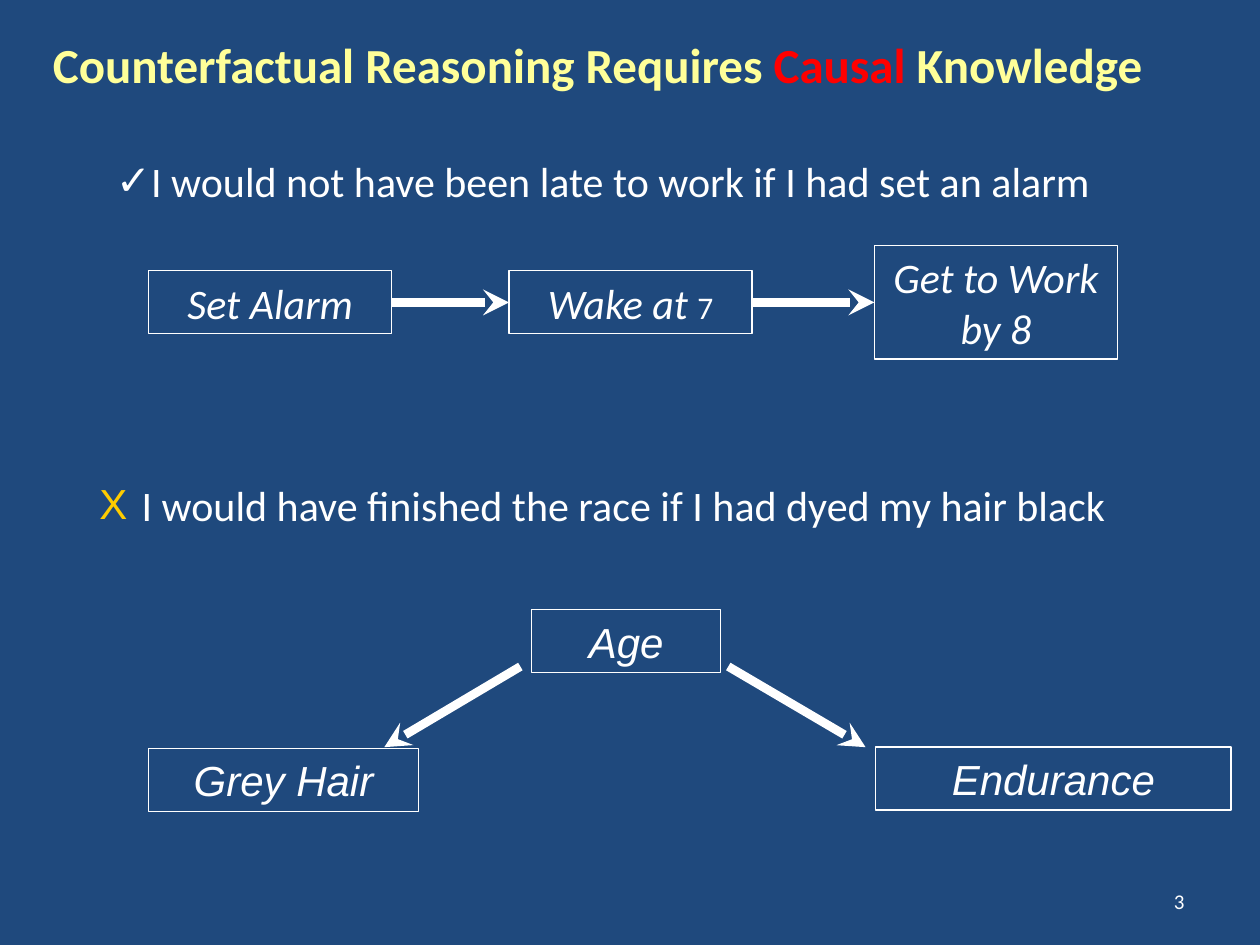
from lxml.etree import SubElement
from pptx import Presentation
from pptx.dml.color import RGBColor
from pptx.enum.shapes import MSO_CONNECTOR as Connector, MSO_SHAPE as Preset
from pptx.enum.text import MSO_ANCHOR as Anchor, MSO_AUTO_SIZE as AutoSize, PP_ALIGN as Align
from pptx.oxml.ns import qn
from pptx.util import Inches, Pt

WIDTH, HEIGHT = Inches(10), Inches(7.5)
COLUMNS, ROWS = 100, 75
WHITE, YELLOW, RED, GOLD, NAVY = "FFFFFF", "FFFF99", "FF0000", "FFCC00", "1F497D"
LEFT, RIGHT = 1, 3


def column(number):
    return round(WIDTH * number / COLUMNS)


def row(number):
    return round(HEIGHT * number / ROWS)


def area(left, top, width, height):
    return column(left), row(top), column(width), row(height)


def color(value):
    return RGBColor.from_string(value)


def add_text(paragraph, text, size=24, font="Calibri", fill=WHITE, bold=False, italic=False):
    run = paragraph.add_run()
    run.text = text
    run.font.size = Pt(size)
    run.font.name = font
    run.font.bold = bold
    run.font.italic = italic
    run.font.color.rgb = color(fill)


def format_paragraph(paragraph, margin, indent=0, bullet=None, bullet_color=WHITE, before=0):
    properties = paragraph._p.get_or_add_pPr()
    properties.set("marL", str(Inches(margin)))
    properties.set("indent", str(Inches(indent)))
    if bullet:
        bullet_fill = SubElement(properties, qn("a:buClr"))
        SubElement(bullet_fill, qn("a:srgbClr"), val=bullet_color)
        SubElement(properties, qn("a:buFont"), typeface="Arial")
        SubElement(properties, qn("a:buChar"), char=bullet)
    else:
        SubElement(properties, qn("a:buNone"))
    paragraph.space_before = Pt(before)
    paragraph.space_after = Pt(18)


def add_text_box(slide, place):
    frame = slide.shapes.add_textbox(*place).text_frame
    frame.word_wrap = True
    return frame


def add_node(group, place, runs, font="Calibri"):
    node = group.shapes.add_shape(Preset.RECTANGLE, *place)
    node.shadow.inherit = False
    node.fill.background()
    node.line.color.rgb = color(WHITE)
    node.line.width = Pt(0.75)
    node.text_frame.word_wrap = True
    paragraph = node.text_frame.paragraphs[0]
    paragraph.alignment = Align.CENTER
    for text, style in runs:
        add_text(paragraph, text, font=font, **style)
    return node


def add_arrow(group, start=(0, 0), end=(0, 0)):
    arrow = group.shapes.add_connector(
        Connector.STRAIGHT, column(start[0]), row(start[1]), column(end[0]), row(end[1]))
    arrow.line.color.rgb = color(WHITE)
    arrow.line.width = Pt(5)
    SubElement(arrow.line._get_or_add_ln(), qn("a:tailEnd"), type="stealth")
    SubElement(arrow._element.spPr, qn("a:effectLst"))
    return arrow


def fill_body(slide):
    slide.shapes.title._element.getparent().remove(slide.shapes.title._element)
    body = slide.placeholders[1]
    body.left, body.top, body.width, body.height = area(-1.8, 2.2, 103.7, 17.3)
    frame = body.text_frame
    frame.auto_size = AutoSize.NONE
    heading = frame.paragraphs[0]
    format_paragraph(heading, 0.5)
    for text, fill in (("Counterfactual Reasoning Requires ", YELLOW),
                       ("Causal ", RED), ("Knowledge", YELLOW)):
        add_text(heading, text, size=28, fill=fill, bold=True)
    claim = frame.add_paragraph()
    claim.level = 1
    format_paragraph(claim, 1.25, -0.25, "✓", before=18)
    add_text(claim, "I would not have been late to work if I had set an alarm")


def add_false_claim(slide):
    claim = add_text_box(slide, area(-3.1, 37.6, 101.2, 8.3)).paragraphs[0]
    claim.level = 1
    format_paragraph(claim, 1.25, -0.25, "X", GOLD)
    add_text(claim, " ", font="Lato")
    add_text(claim, "I would have finished the race if I had dyed my hair black")


def add_alarm_chain(slide):
    group = slide.shapes.add_group_shape()
    middle, width = 24, 19.3
    italic = {"italic": True}
    steps = (
        (11.8, 5, [("Set Alarm", italic)]),
        (40.4, 5, [("Wake at ", italic), ("7", {"size": 18})]),
        (69.4, 9, [("Get to Work by 8", italic)]),
    )
    nodes = [add_node(group, area(left, middle - height / 2, width, height), runs)
             for left, height, runs in steps]
    for source, target in zip(nodes, nodes[1:]):
        arrow = add_arrow(group)
        arrow.begin_connect(source, RIGHT)
        arrow.end_connect(target, LEFT)


def add_age_fork(slide):
    group = slide.shapes.add_group_shape()
    for text, left, top, width in (("Grey Hair", 11.8, 59.4, 21.4),
                                   ("Age", 42.2, 48.4, 15),
                                   ("Endurance", 69.5, 59.3, 28.2)):
        add_node(group, area(left, top, width, 5), [(text, {"italic": True})], font="Arial")
    for start, end in ((41.3, 30.5), (57.8, 68.7)):
        add_arrow(group, (start, 52.9), (end, 59.3))


def add_page_number(slide):
    frame = add_text_box(slide, area(71.7, 69.5, 23.3, 4))
    frame.vertical_anchor = Anchor.MIDDLE
    paragraph = frame.paragraphs[0]
    paragraph.alignment = Align.RIGHT
    add_text(paragraph, "3", size=12)


def main():
    presentation = Presentation()
    presentation.slide_width, presentation.slide_height = WIDTH, HEIGHT
    slide = presentation.slides.add_slide(presentation.slide_layouts[1])
    slide.background.fill.solid()
    slide.background.fill.fore_color.rgb = color(NAVY)
    fill_body(slide)
    add_alarm_chain(slide)
    add_age_fork(slide)
    add_false_claim(slide)
    add_page_number(slide)
    presentation.save("out.pptx")


if __name__ == "__main__":
    main()
